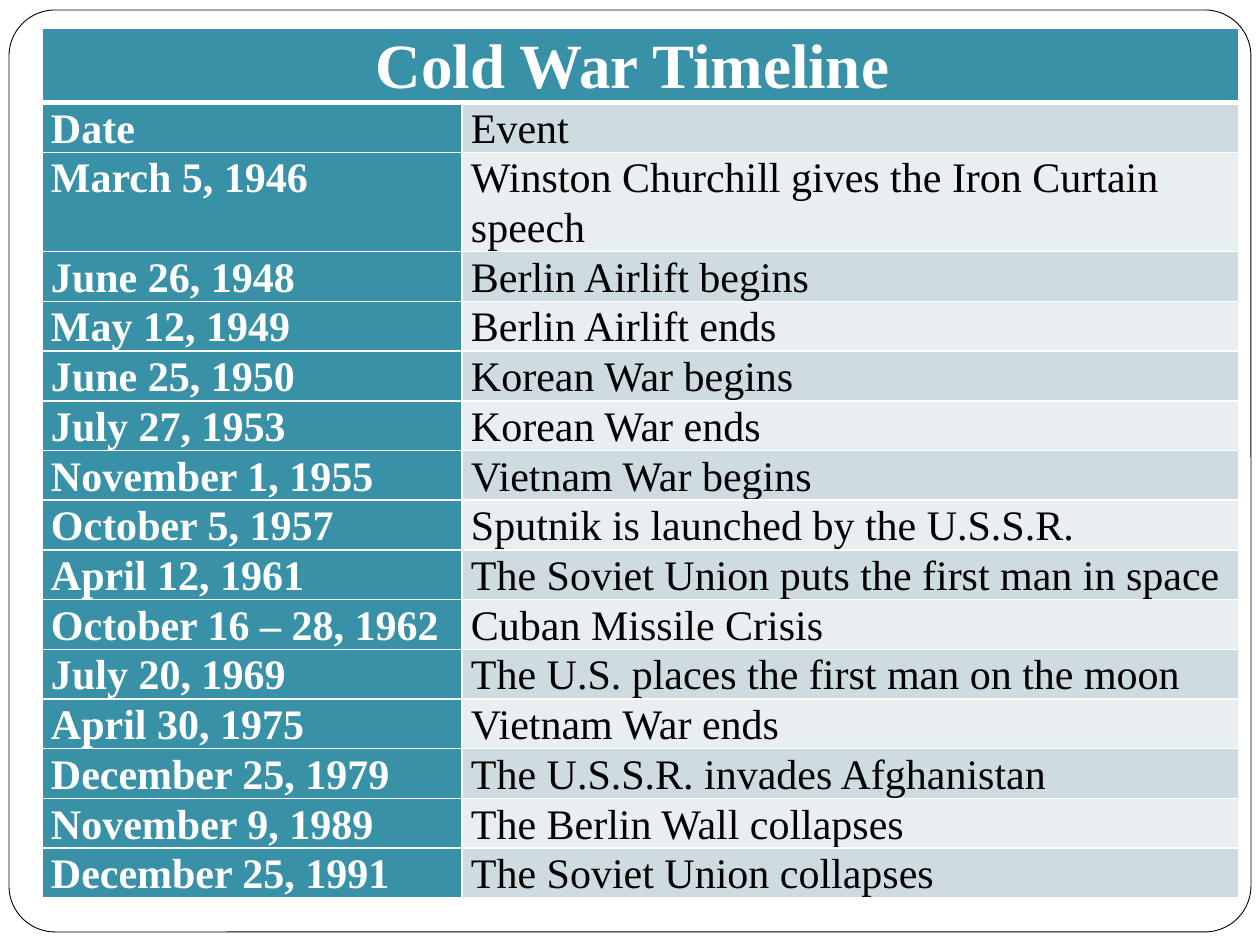
from dataclasses import dataclass

from lxml import etree
from pptx import Presentation
from pptx import util as u
from pptx.dml import color
from pptx.enum import shapes, text
from pptx.oxml import ns

EMU_PER_PX = 914400 / 126
FONT = "Times New Roman"
COLORS = {
    "paper": "FFFFFF",
    "ink": "000000",
    "teal": "3891A7",
    "band_dark": "CEDCE1",
    "band_light": "E8EEF1",
}
COLUMN_WIDTHS = (420, 777)
TITLE_HEIGHT = 33
ROW_HEIGHT = 47
TABLE_HEIGHT = 890
BORDER_PT = 1
TITLE_RULE_PT = 3


@dataclass(frozen=True)
class Entry:
    date: str
    event: str


@dataclass(frozen=True)
class CellStyle:
    fill: str
    ink: str
    bold: bool
    size: int = 24
    before: int = 0
    bottom_pt: int = BORDER_PT
    align: text.PP_ALIGN = text.PP_ALIGN.LEFT


ENTRIES = (
    Entry("Date", "Event"),
    Entry("March 5, 1946", "Winston Churchill gives the Iron Curtain speech"),
    Entry("June 26, 1948", "Berlin Airlift begins"),
    Entry("May 12, 1949", "Berlin Airlift ends"),
    Entry("June 25, 1950", "Korean War begins"),
    Entry("July 27, 1953", "Korean War ends"),
    Entry("November 1, 1955", "Vietnam War begins"),
    Entry("October 5, 1957", "Sputnik is launched by the U.S.S.R."),
    Entry("April 12, 1961", "The Soviet Union puts the first man in space"),
    Entry("October 16 – 28, 1962", "Cuban Missile Crisis"),
    Entry("July 20, 1969", "The U.S. places the first man on the moon"),
    Entry("April 30, 1975", "Vietnam War ends"),
    Entry("December 25, 1979", "The U.S.S.R. invades Afghanistan"),
    Entry("November 9, 1989", "The Berlin Wall collapses"),
    Entry("December 25, 1991", "The Soviet Union collapses"),
)


def px(length: int) -> int:
    return round(length * EMU_PER_PX)


def rgb(name: str) -> color.RGBColor:
    return color.RGBColor.from_string(COLORS[name])


def draw_borders(cell, bottom_pt: int) -> None:
    properties = cell._tc.get_or_add_tcPr()
    for side in "LRTB":
        width = bottom_pt if side == "B" else BORDER_PT
        line = etree.SubElement(properties, ns.qn(f"a:ln{side}"), w=str(u.Pt(width)))
        fill = etree.SubElement(line, ns.qn("a:solidFill"))
        etree.SubElement(fill, ns.qn("a:srgbClr"), val=COLORS["paper"])


def style_cell(cell, style: CellStyle) -> None:
    draw_borders(cell, style.bottom_pt)
    cell.fill.solid()
    cell.fill.fore_color.rgb = rgb(style.fill)
    cell.margin_left = cell.margin_right = px(9)
    cell.margin_top = cell.margin_bottom = 0


def write_cell(cell, wording: str, style: CellStyle) -> None:
    style_cell(cell, style)
    cell.text_frame.text = wording
    paragraph = cell.text_frame.paragraphs[0]
    paragraph.alignment = style.align
    paragraph.line_spacing = 1.07
    paragraph.space_before = u.Pt(style.before)
    for run in paragraph.runs:
        run.font.name = FONT
        run.font.size = u.Pt(style.size)
        run.font.bold = style.bold
        run.font.color.rgb = rgb(style.ink)


def draw_frame(slide) -> None:
    frame = slide.shapes.add_shape(
        shapes.MSO_SHAPE.ROUNDED_RECTANGLE, px(9), px(10), px(1242), px(922)
    )
    frame.adjustments[0] = 0.05
    frame.shadow.inherit = False
    frame.fill.solid()
    frame.fill.fore_color.rgb = rgb("paper")
    frame.line.color.rgb = rgb("ink")
    frame.line.width = u.Pt(0.5)


def draw_timeline(slide) -> None:
    holder = slide.shapes.add_table(
        len(ENTRIES) + 1, len(COLUMN_WIDTHS),
        px(42), px(28), px(sum(COLUMN_WIDTHS)), px(TABLE_HEIGHT),
    )
    timeline = holder.table
    for column, width in zip(timeline.columns, COLUMN_WIDTHS):
        column.width = px(width)
    for index, row in enumerate(timeline.rows):
        row.height = px(ROW_HEIGHT if index else TITLE_HEIGHT)
    holder.height = px(TABLE_HEIGHT)

    title_style = CellStyle(
        "teal", "paper", True, size=36,
        bottom_pt=TITLE_RULE_PT, align=text.PP_ALIGN.CENTER,
    )
    title, covered = timeline.cell(0, 0), timeline.cell(0, 1)
    title.merge(covered)
    write_cell(title, "Cold War Timeline ", title_style)
    style_cell(covered, title_style)

    for index, entry in enumerate(ENTRIES):
        before = 6 if index else 0
        band = "band_light" if index % 2 else "band_dark"
        date_style = CellStyle("teal", "paper", True, before=before)
        event_style = CellStyle(band, "ink", False, before=before)
        write_cell(timeline.cell(index + 1, 0), entry.date, date_style)
        write_cell(timeline.cell(index + 1, 1), entry.event, event_style)


def main() -> None:
    deck = Presentation()
    deck.slide_width, deck.slide_height = px(1260), px(945)
    slide = deck.slides.add_slide(deck.slide_layouts[6])
    draw_frame(slide)
    draw_timeline(slide)
    deck.save("out.pptx")


if __name__ == "__main__":
    main()
